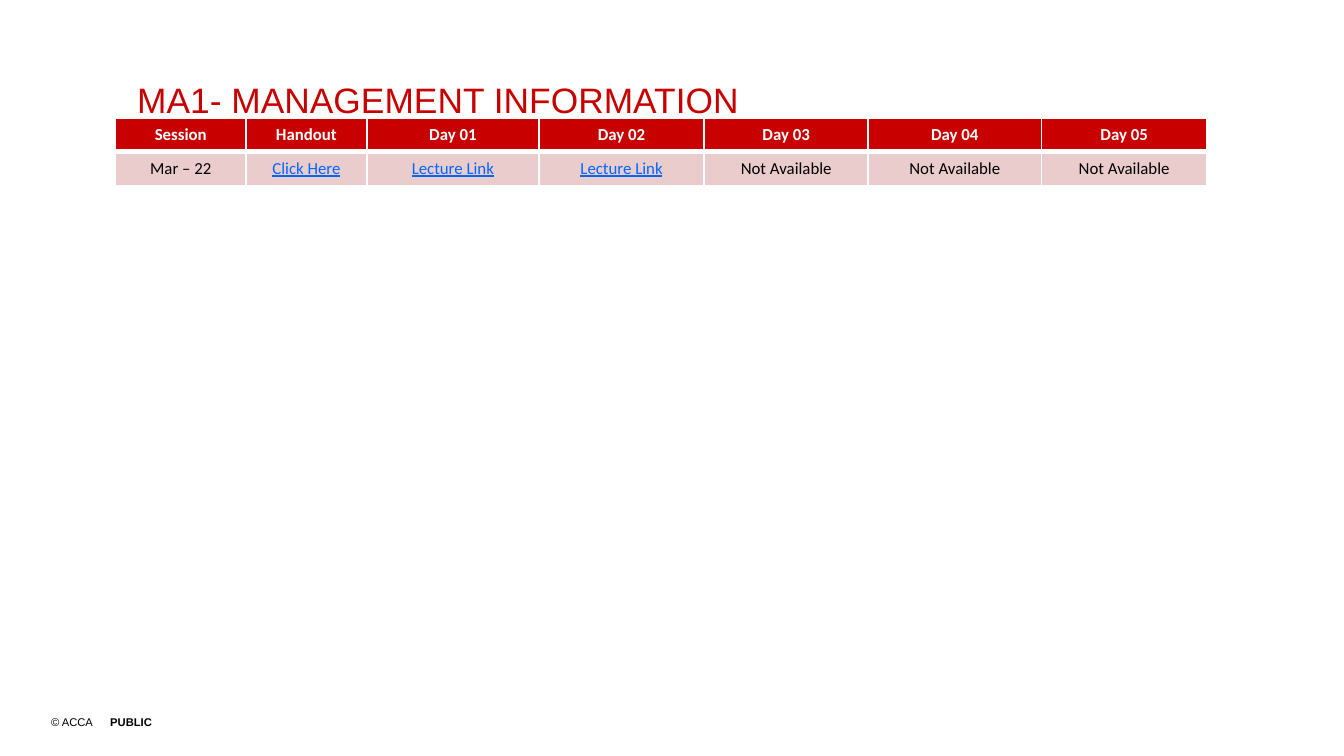
from lxml import etree
from pptx import Presentation
from pptx.dml.color import RGBColor
from pptx.enum.text import MSO_ANCHOR, PP_ALIGN
from pptx.oxml.ns import qn
from pptx.util import Inches, Pt

CENTER = PP_ALIGN.CENTER
LEFT = PP_ALIGN.LEFT
TOP = MSO_ANCHOR.TOP
MIDDLE = MSO_ANCHOR.MIDDLE

COLORS = {
    "red": "C80000",
    "pink": "EBCCCC",
    "link": "0066FF",
    "black": "000000",
    "white": "FFFFFF",
}
HEADINGS = ["Session", "Handout"] + [f"Day {day:02d}" for day in range(1, 6)]
LINKS = ["Click Here"] + ["Lecture Link"] * 2
SESSION = ["Mar – 22"] + LINKS + ["Not Available"] * 3
COLUMN_WIDTHS = [0.97, 0.9, 1.28, 1.23, 1.22, 1.29, 1.23]
ROW_HEIGHT = 0.25


def rgb(name):
    """Return the palette colour with this name."""
    return RGBColor.from_string(COLORS[name])


def style_run(run, face, size, color, bold=False):
    """Give a run its font, size, colour and weight."""
    run.font.name = face
    run.font.size = Pt(size)
    run.font.color.rgb = rgb(color)
    run.font.bold = bold


def clear_margins(frame):
    """Remove the inner margins of a text frame."""
    frame.margin_left = frame.margin_right = 0
    frame.margin_top = frame.margin_bottom = 0


def add_title(slide, wording):
    """Place and format the slide title."""
    title = slide.shapes.title
    title.left, title.top = Inches(1.02), Inches(0.6)
    title.width, title.height = Inches(7.96), Inches(0.31)
    frame = title.text_frame
    clear_margins(frame)
    frame.vertical_anchor = MIDDLE
    frame.text = wording
    heading = frame.paragraphs[0]
    heading.alignment = LEFT
    heading.line_spacing = 0.95
    style_run(heading.runs[0], "Arial", 18.9, "red")


def add_footer(slide, owner, classification):
    """Add the copyright line with its classification at a tab stop."""
    footer = slide.shapes.add_textbox(Inches(0.38), Inches(5.32), Inches(1.78), Inches(0.1))
    frame = footer.text_frame
    clear_margins(frame)
    frame.word_wrap = True
    line = frame.paragraphs[0]
    stops = etree.SubElement(line._p.get_or_add_pPr(), qn("a:tabLst"))
    etree.SubElement(stops, qn("a:tab"), pos=str(Inches(0.44)), algn="l")
    line.text = f"{owner}\t"
    line.add_run().text = classification
    for run in line.runs:
        style_run(run, "Arial", 6, "black", run.text == classification)


def add_borders(cell, top, bottom):
    """Draw white cell borders, with the given top and bottom widths."""
    properties = cell._tc.get_or_add_tcPr()
    for side, width in {"L": 1, "R": 1, "T": top, "B": bottom}.items():
        border = etree.SubElement(properties, qn(f"a:ln{side}"), w=str(Pt(width)))
        fill = etree.SubElement(border, qn("a:solidFill"))
        etree.SubElement(fill, qn("a:srgbClr"), val=COLORS["white"])


def fill_cell(cell, wording, is_heading):
    """Write and format one heading or session cell."""
    add_borders(cell, 1 if is_heading else 3, 3 if is_heading else 1)
    cell.fill.solid()
    cell.fill.fore_color.rgb = rgb("red" if is_heading else "pink")
    cell.vertical_anchor = TOP if is_heading else MIDDLE
    cell.text_frame.text = wording
    entry = cell.text_frame.paragraphs[0]
    entry.alignment = CENTER
    is_link = wording in LINKS
    color = "white" if is_heading else "link" if is_link else "black"
    style_run(entry.runs[0], "Calibri", 9, color, is_heading)
    entry.runs[0].font.underline = is_link


def add_sessions(slide):
    """Add the table of sessions and lecture days."""
    rows = [HEADINGS, SESSION]
    sessions = slide.shapes.add_table(
        len(rows), len(HEADINGS), Inches(0.86), Inches(0.88),
        Inches(sum(COLUMN_WIDTHS)), Inches(ROW_HEIGHT * len(rows)),
    ).table
    for column, width in zip(sessions.columns, COLUMN_WIDTHS):
        column.width = Inches(width)
    for index, row in enumerate(rows):
        sessions.rows[index].height = Inches(ROW_HEIGHT)
        for cell, wording in zip(sessions.rows[index].cells, row):
            fill_cell(cell, wording, index == 0)


def main():
    """Build the slide and save it."""
    deck = Presentation()
    deck.slide_width = Inches(10)
    deck.slide_height = deck.slide_width * 9 // 16
    slide = deck.slides.add_slide(deck.slide_layouts[5])
    add_footer(slide, "© ACCA", "PUBLIC")
    add_title(slide, "MA1- MANAGEMENT INFORMATION")
    add_sessions(slide)
    deck.save("out.pptx")


if __name__ == "__main__":
    main()
